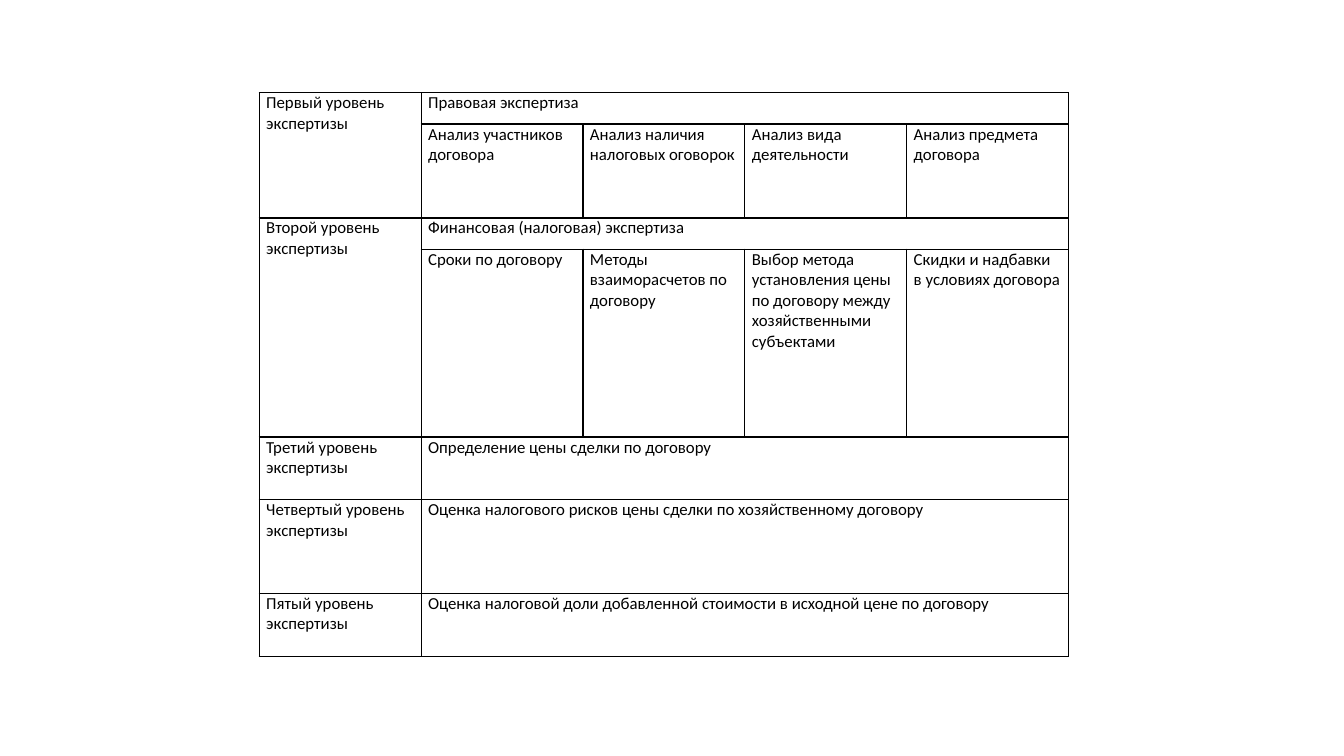
from dataclasses import dataclass

from lxml import etree
from pptx import Presentation
from pptx.dml.color import RGBColor
from pptx.oxml.ns import qn
from pptx.table import Table, _Cell
from pptx.util import Pt

BLACK = RGBColor(0, 0, 0)
BLANK_LAYOUT = 6
COLUMN_COUNT = 5
COLUMN_WIDTH = Pt(115.63)
ROW_UNIT = 22.36
TABLE_LEFT, TABLE_TOP = Pt(185.2), Pt(66.3)
BORDER_WIDTH = Pt(1)
BORDER_SIDES = ("a:lnL", "a:lnR", "a:lnT", "a:lnB")


@dataclass(frozen=True)
class Level:
    """One level of review; heights are in row units."""

    name: str
    subject: str
    subject_height: int
    steps: tuple[str, ...] = ()
    steps_height: int = 0


LEVELS = (
    Level("Первый уровень экспертизы", "Правовая экспертиза", 1,
          ("Анализ участников договора", "Анализ наличия налоговых оговорок",
           "Анализ вида деятельности", "Анализ предмета договора"), 3),
    Level("Второй уровень экспертизы", "Финансовая (налоговая) экспертиза", 1,
          ("Сроки по договору", "Методы взаиморасчетов по договору",
           "Выбор метода установления цены по договору между хозяйственными субъектами",
           "Скидки и надбавки\vв условиях договора"), 6),
    Level("Третий уровень экспертизы", "Определение цены сделки по договору", 2),
    Level("Четвертый уровень экспертизы",
          "Оценка налогового рисков цены сделки по хозяйственному договору", 3),
    Level("Пятый уровень экспертизы",
          "Оценка налоговой доли добавленной стоимости в исходной цене по договору", 2),
)


def add_borders(cell: _Cell) -> None:
    properties = cell._tc.get_or_add_tcPr()
    for side in BORDER_SIDES:
        line = etree.SubElement(properties, qn(side), w=str(int(BORDER_WIDTH)))
        fill = etree.SubElement(line, qn("a:solidFill"))
        etree.SubElement(fill, qn("a:srgbClr"), val=str(BLACK))


def format_cell(cell: _Cell) -> None:
    add_borders(cell)
    cell.fill.background()
    cell.margin_left = cell.margin_right = Pt(5)
    cell.margin_top = cell.margin_bottom = Pt(0)
    for paragraph in cell.text_frame.paragraphs:
        paragraph.font.name = "Calibri"
        paragraph.font.size = Pt(12)
        paragraph.font.color.rgb = BLACK


def fill_level(table: Table, row: int, level: Level) -> int:
    """Write one level from the given row and return the next free row."""
    last_row = row + 1 if level.steps else row
    table.cell(row, 0).text = level.name
    table.cell(row, 1).text = level.subject
    table.rows[row].height = Pt(level.subject_height * ROW_UNIT)
    table.cell(row, 1).merge(table.cell(row, COLUMN_COUNT - 1))
    if level.steps:
        table.cell(row, 0).merge(table.cell(last_row, 0))
        table.rows[last_row].height = Pt(level.steps_height * ROW_UNIT)
        for column, step in enumerate(level.steps, start=1):
            table.cell(last_row, column).text = step
    return last_row + 1


def main() -> None:
    deck = Presentation()
    deck.slide_width, deck.slide_height = Pt(960), Pt(540)
    page = deck.slides.add_slide(deck.slide_layouts[BLANK_LAYOUT])

    row_count = sum(2 if level.steps else 1 for level in LEVELS)
    units = sum(level.subject_height + level.steps_height for level in LEVELS)
    table = page.shapes.add_table(
        row_count, COLUMN_COUNT, TABLE_LEFT, TABLE_TOP,
        COLUMN_WIDTH * COLUMN_COUNT, Pt(units * ROW_UNIT)).table
    table.first_row = table.horz_banding = False
    for column in table.columns:
        column.width = COLUMN_WIDTH

    row = 0
    for level in LEVELS:
        row = fill_level(table, row, level)
    for cell in table.iter_cells():
        format_cell(cell)
    deck.save("out.pptx")


if __name__ == "__main__":
    main()
